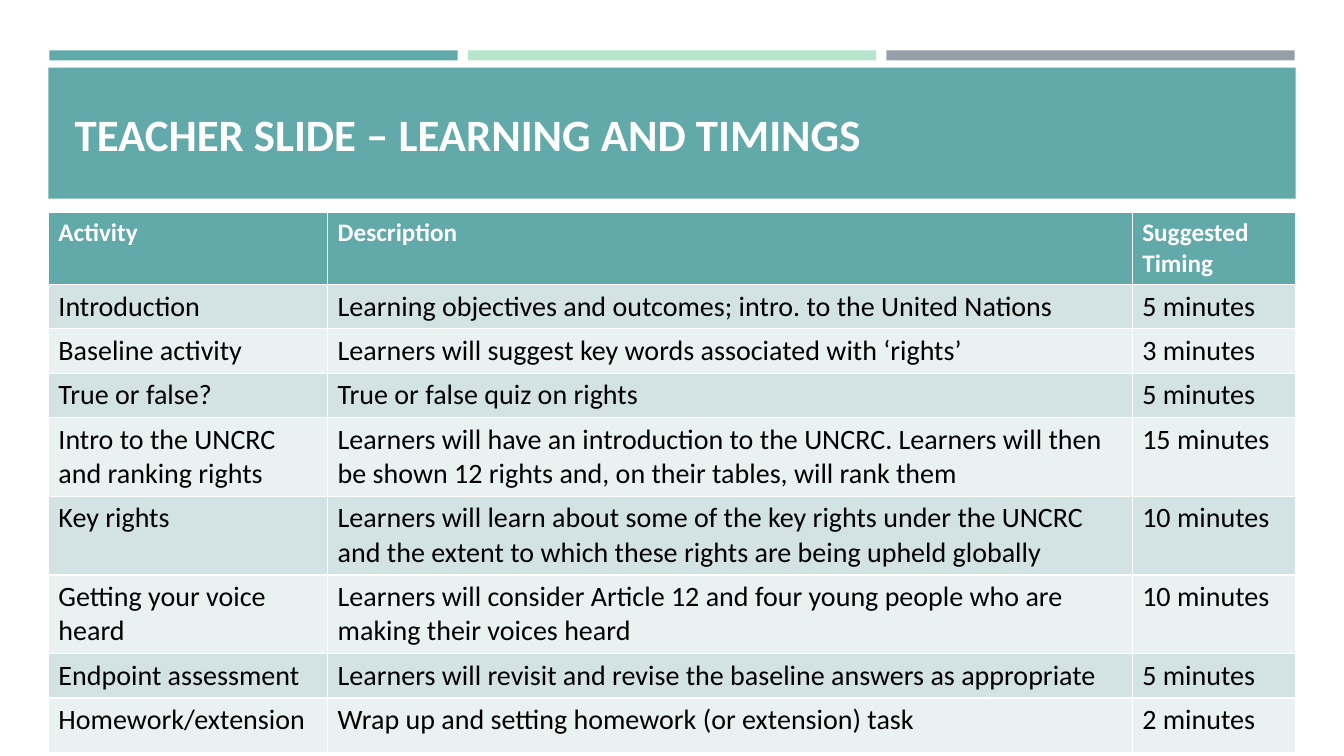
from pptx import Presentation
from pptx.dml.color import RGBColor
from pptx.enum.shapes import MSO_SHAPE
from pptx.enum.text import MSO_ANCHOR, PP_ALIGN
from pptx.util import Pt

PX = 9144  # 100 px to the inch
TEAL, MINT, GREY = "62A9AA", "B7E5CB", "969FA7"
WHITE, BLACK = "FFFFFF", "000000"
BANDS = ["EAF1F1", "D3E2E2"]


def paint(fill, color):
    fill.solid()
    fill.fore_color.rgb = RGBColor.from_string(color)


def style(tf, size, color, bold):
    for p in tf.paragraphs:
        for r in p.runs:
            r.font.name = "Calibri"
            r.font.size = Pt(size)
            r.font.bold = bold
            r.font.color.rgb = RGBColor.from_string(color)


prs = Presentation()
prs.slide_width, prs.slide_height = 1333 * PX, 750 * PX
s = prs.slides.add_slide(prs.slide_layouts[5])

# Three accent strips and the title band
bars = [(49 + 415 * i, 50, 405, 10, c) for i, c in enumerate([TEAL, MINT, GREY])]
bars.append((48, 67, 1237, 130, TEAL))
for x, y, w, h, color in bars:
    bar = s.shapes.add_shape(MSO_SHAPE.RECTANGLE, x * PX, y * PX, w * PX, h * PX)
    bar.shadow.inherit = False
    paint(bar.fill, color)
    bar.line.fill.background()

# Title, brought in front of its band
title = s.shapes.title
title.left, title.top, title.width, title.height = 64 * PX, 77 * PX, 1206 * PX, 111 * PX
s.shapes._spTree.append(title._element)
tf = title.text_frame
tf.text = "TEACHER SLIDE – LEARNING AND TIMINGS"
tf.word_wrap = True
tf.vertical_anchor = MSO_ANCHOR.MIDDLE
tf.paragraphs[0].alignment = PP_ALIGN.LEFT
style(tf, 32, WHITE, True)

# Lesson timetable; the default table style supplies the white rules
lesson = [
    ("Activity", "Description", "Suggested Timing"),
    ("Introduction", "Learning objectives and outcomes; intro. to the United Nations", "5 minutes"),
    ("Baseline activity", "Learners will suggest key words associated with ‘rights’", "3 minutes"),
    ("True or false?", "True or false quiz on rights", "5 minutes"),
    ("Intro to the UNCRC and ranking rights",
     "Learners will have an introduction to the UNCRC. Learners will then "
     "be shown 12 rights and, on their tables, will rank them", "15 minutes"),
    ("Key rights",
     "Learners will learn about some of the key rights under the UNCRC "
     "and the extent to which these rights are being upheld globally", "10 minutes"),
    ("Getting your voice heard",
     "Learners will consider Article 12 and four young people who are "
     "making their voices heard", "10 minutes"),
    ("Endpoint assessment",
     "Learners will revisit and revise the baseline answers as appropriate", "5 minutes"),
    ("Homework/extension", "Wrap up and setting homework (or extension) task", "2 minutes"),
]
col_widths = [277, 798, 162]
row_heights = [69, 44, 43, 43, 76, 76, 76, 43, 54]
table = s.shapes.add_table(len(lesson), len(col_widths), 48 * PX, 211 * PX,
                           sum(col_widths) * PX, sum(row_heights) * PX).table
for col, w in zip(table.columns, col_widths):
    col.width = w * PX
for i, (row, h, texts) in enumerate(zip(table.rows, row_heights, lesson)):
    row.height = h * PX
    for cell, text in zip(row.cells, texts):
        cell.text_frame.text = text
        if i == 0:
            paint(cell.fill, TEAL)
            style(cell.text_frame, 18, WHITE, True)
        else:
            paint(cell.fill, BANDS[i % 2])
            style(cell.text_frame, 20, BLACK, False)

prs.save("out.pptx")
